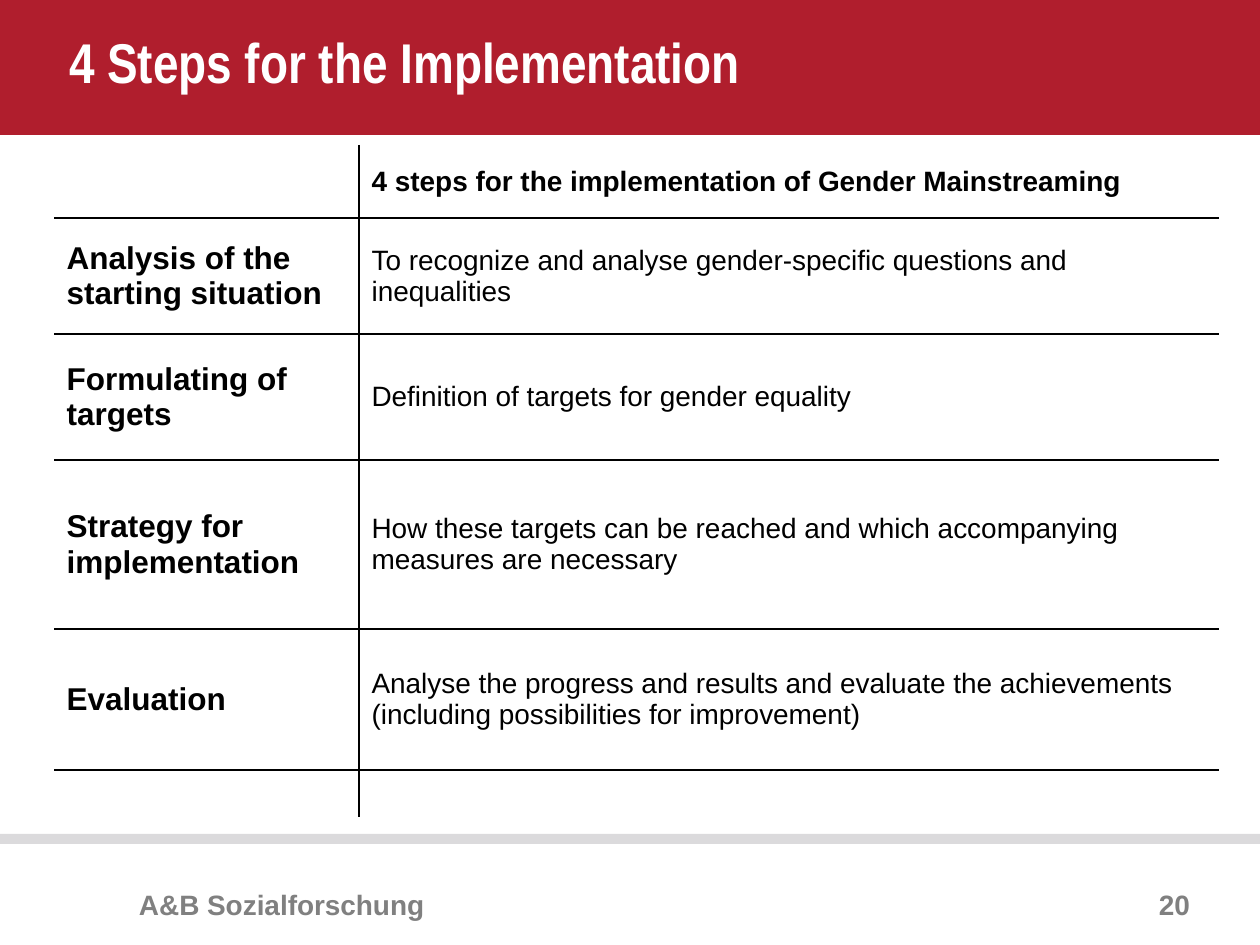
from lxml.etree import SubElement
from pptx import Presentation
from pptx.dml.color import RGBColor
from pptx.enum.shapes import MSO_SHAPE as SHAPE
from pptx.enum.text import MSO_ANCHOR as ANCHOR, MSO_AUTO_SIZE as AUTO, PP_ALIGN as ALIGN
from pptx.oxml.ns import qn
from pptx.util import Emu, Pt

PX_PER_INCH = 126
COLORS = {"red": "B01E2D", "rule": "DBDADC", "footer": "808080",
          "text": "000000", "white": "FFFFFF"}
COL_WIDTHS = [305, 860]
ROW_HEIGHTS = [73, 116, 126, 169, 141, 47]
STEPS = [
    ("", "4 steps for the implementation of Gender Mainstreaming"),
    ("Analysis of the starting situation",
     "To recognize and analyse gender-specific questions and inequalities"),
    ("Formulating of targets", "Definition of targets for gender equality"),
    ("Strategy for implementation",
     "How these targets can be reached and which accompanying measures are necessary"),
    ("Evaluation",
     "Analyse the progress and results and evaluate the achievements "
     "(including possibilities for improvement)"),
    ("", ""),
]


def px(n):
    return Emu(round(n * 914400 / PX_PER_INCH))


def rgb(name):
    return RGBColor.from_string(COLORS[name])


class Deck:
    def __init__(self, width, height):
        self.prs = Presentation()
        self.prs.slide_width, self.prs.slide_height = px(width), px(height)
        self.s = self.prs.slides.add_slide(self.prs.slide_layouts[5])

    def set_text(self, tf, text, size, color="text", bold=True, font="Arial", align=ALIGN.LEFT):
        tf.text = text
        p = tf.paragraphs[0]
        p.alignment = align
        for r in p.runs:
            f = r.font
            f.name, f.size, f.bold = font, Pt(size), bold
            f.color.rgb = rgb(color)

    def frame(self, tf, anchor):
        """Give a text frame no insets, wrapping and a fixed size."""
        tf.margin_left = tf.margin_right = tf.margin_top = tf.margin_bottom = 0
        tf.word_wrap, tf.auto_size, tf.vertical_anchor = True, AUTO.NONE, anchor

    def bar(self, x, y, w, h, color):
        sp = self.s.shapes.add_shape(SHAPE.RECTANGLE, px(x), px(y), px(w), px(h))
        sp.shadow.inherit = False
        sp.fill.solid()
        sp.fill.fore_color.rgb = rgb(color)
        sp.line.fill.background()

    def title(self, x, y, w, h, text):
        """Fill the title placeholder and bring it in front of the bars."""
        sp = self.s.shapes.title
        sp.left, sp.top, sp.width, sp.height = px(x), px(y), px(w), px(h)
        self.frame(sp.text_frame, ANCHOR.MIDDLE)
        self.set_text(sp.text_frame, text, 32, "white", font="Arial Narrow")
        self.s.shapes._spTree.append(sp._element)

    def footer(self, x, y, w, h, text, align=ALIGN.LEFT):
        tf = self.s.shapes.add_textbox(px(x), px(y), px(w), px(h)).text_frame
        self.frame(tf, ANCHOR.BOTTOM)
        self.set_text(tf, text, 16, "footer", align=align)

    def borders(self, cell, visible):
        """Draw the named sides (L, R, T, B) and clear the others."""
        tc_pr = cell._tc.get_or_add_tcPr()
        for side in "LRTB":
            ln = SubElement(tc_pr, qn(f"a:ln{side}"), w=str(Pt(1.5)))
            if side in visible:
                fill = SubElement(ln, qn("a:solidFill"))
                SubElement(fill, qn("a:srgbClr"), val=COLORS["text"])
            else:
                SubElement(ln, qn("a:noFill"))

    def table(self, x, y, widths, heights, rows):
        last_row, last_col = len(heights) - 1, len(widths) - 1
        table = self.s.shapes.add_table(len(heights), len(widths), px(x), px(y),
                                        px(sum(widths)), px(sum(heights))).table
        table.first_row = table.horz_banding = False
        for col, w in zip(table.columns, widths):
            col.width = px(w)
        for row, h in zip(table.rows, heights):
            row.height = px(h)
        for i, row in enumerate(rows):
            for j, text in enumerate(row):
                cell = table.cell(i, j)
                inner = {"L": j > 0, "R": j < last_col, "T": i > 0, "B": i < last_row}
                self.borders(cell, [side for side, shown in inner.items() if shown])
                cell.fill.background()
                cell.vertical_anchor = ANCHOR.MIDDLE
                if text:
                    self.set_text(cell.text_frame, text, 18 if j == 0 else 16,
                                  bold=i == 0 or j == 0)
                else:
                    cell.margin_top = cell.margin_bottom = 0


def main():
    deck = Deck(1260, 945)
    deck.bar(0, 834, 1260, 10, "rule")
    deck.bar(0, 0, 1260, 135, "red")
    deck.title(69, 26, 1131, 71, "4 Steps for the Implementation")
    deck.footer(139, 879, 307, 42, "A&B Sozialforschung")
    deck.footer(1106, 885, 84, 36, "20", ALIGN.RIGHT)
    deck.table(54, 145, COL_WIDTHS, ROW_HEIGHTS, STEPS)
    deck.prs.save("out.pptx")


if __name__ == "__main__":
    main()
